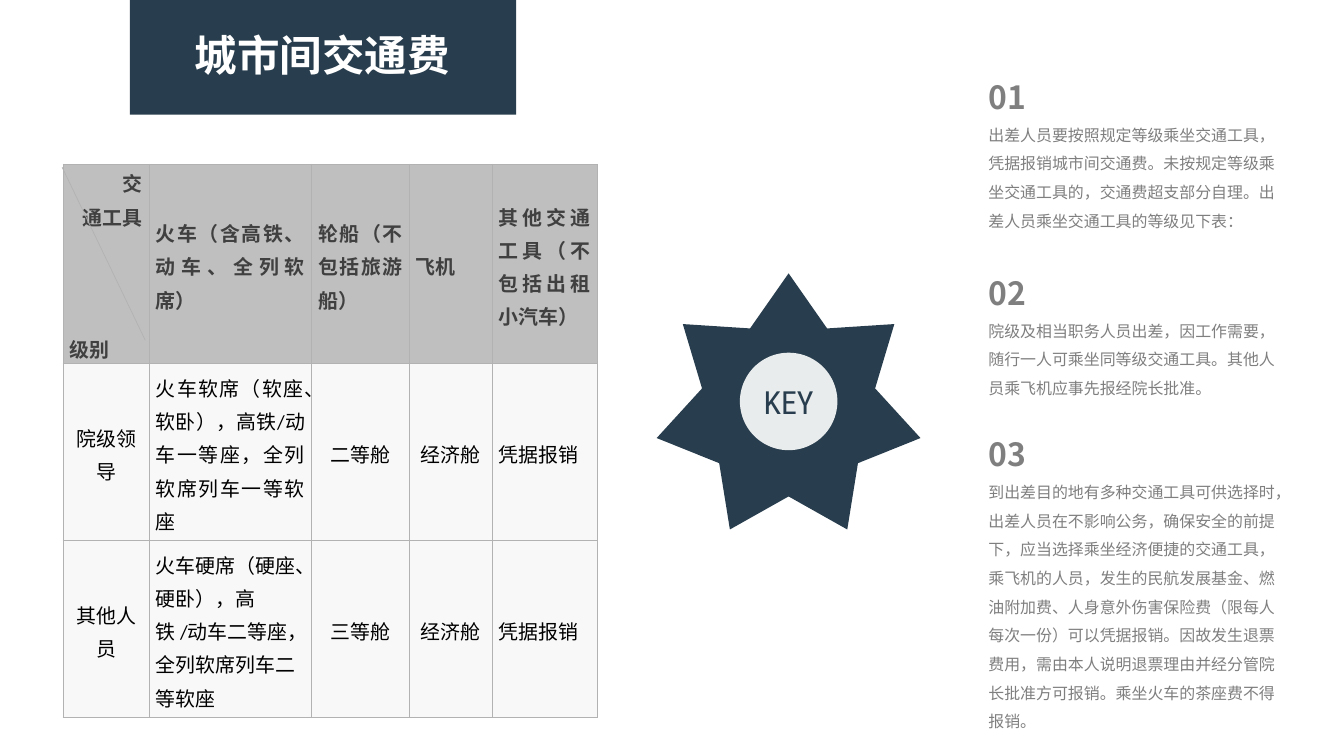
from lxml import etree
from pptx import Presentation
from pptx import util as u
from pptx.dml.color import RGBColor
from pptx.enum import shapes, text
from pptx.oxml.ns import qn

NAVY = RGBColor(0x28, 0x3E, 0x4E)
WHITE = RGBColor(0xFF, 0xFF, 0xFF)
BLACK = RGBColor(0x00, 0x00, 0x00)
TEXT_GRAY = RGBColor(0x7F, 0x7F, 0x7F)
HEADER_TEXT = RGBColor(0x40, 0x40, 0x40)
HEADER_FILL = RGBColor(0xBF, 0xBF, 0xBF)
BODY_FILL = RGBColor(0xF8, 0xF8, 0xF8)
BORDER = RGBColor(0xB2, 0xB2, 0xB2)
CJK_FONT = "Noto Sans CJK SC"
LEFT, CENTER = text.PP_ALIGN.LEFT, text.PP_ALIGN.CENTER
RIGHT, JUSTIFY = text.PP_ALIGN.RIGHT, text.PP_ALIGN.JUSTIFY

TITLE = "城市间交通费"
NOTES = [  # number, top, height, body
    ("01", 0.61, 1.82, "出差人员要按照规定等级乘坐交通工具，凭据报销城市间交通费。未按规定等级乘坐交通工具的，"
     "交通费超支部分自理。出差人员乘坐交通工具的等级见下表："),
    ("02", 2.66, 1.51, "院级及相当职务人员出差，因工作需要，随行一人可乘坐同等级交通工具。"
     "其他人员乘飞机应事先报经院长批准。"),
    ("03", 4.35, 3.33, "到出差目的地有多种交通工具可供选择时，出差人员在不影响公务，确保安全的前提下，"
     "应当选择乘坐经济便捷的交通工具，乘飞机的人员，发生的民航发展基金、燃油附加费、"
     "人身意外伤害保险费（限每人每次一份）可以凭据报销。因故发生退票费用，"
     "需由本人说明退票理由并经分管院长批准方可报销。乘坐火车的茶座费不得报销。"),
]
CORNER = ("交\v通工具", "级别")
TABLE_ROWS = [
    ("", "火车（含高铁、动车、全列软席）", "轮船（不包括旅游船）", "飞机", "其他交通工具（不包括出租小汽车）"),
    ("院级领导", "火车软席（软座、软卧），高铁/动车一等座，全列软席列车一等软座", "二等舱", "经济舱", "凭据报销"),
    ("其他人员", "火车硬席（硬座、硬卧），高铁 /动车二等座，全列软席列车二等软座", "三等舱", "经济舱", "凭据报销"),
]
BODY_ALIGNMENTS = [
    (CENTER, JUSTIFY, CENTER, CENTER, JUSTIFY),
    (CENTER, LEFT, CENTER, CENTER, LEFT),
]
COLUMN_WIDTHS = (0.9, 1.7, 1.02, 0.87, 1.1)
ROW_HEIGHT = 1.85


def box(left, top, width, height):
    return [u.Inches(value) for value in (left, top, width, height)]


def write(frame, words, size, color, font=CJK_FONT, bold=False, align=LEFT, spacing=None, before=None):
    """Fill the first paragraph of the frame, or add one when it is taken."""
    paragraph = frame.paragraphs[0]
    if paragraph.text:
        paragraph = frame.add_paragraph()
    paragraph.text = words
    paragraph.alignment = align
    paragraph.line_spacing = spacing
    paragraph.space_before = before
    for run in paragraph.runs:
        run.font.name, run.font.size, run.font.bold = font, u.Pt(size), bold
        run.font.color.rgb = color
        etree.SubElement(run.font._element, qn("a:ea"), typeface=CJK_FONT)


def set_margins(frame, side, vertical):
    frame.margin_left = frame.margin_right = u.Inches(side)
    frame.margin_top = frame.margin_bottom = u.Inches(vertical)


def add_filled(slide, preset, bounds, color):
    shape = slide.shapes.add_shape(preset, *box(*bounds))
    shape.shadow.inherit = False
    shape.fill.solid()
    shape.fill.fore_color.rgb = color
    shape.line.fill.background()
    return shape


def add_borders(cell):
    properties = cell._tc.get_or_add_tcPr()
    for index, side in enumerate(("lnL", "lnR", "lnT", "lnB")):
        line = etree.Element(qn("a:" + side), w=str(u.Pt(1)))
        fill = etree.SubElement(line, qn("a:solidFill"))
        etree.SubElement(fill, qn("a:srgbClr"), val=str(BORDER))
        properties.insert(index, line)


def add_fare_table(slide):
    bounds = box(0.66, 1.72, sum(COLUMN_WIDTHS), ROW_HEIGHT * len(TABLE_ROWS))
    table = slide.shapes.add_table(len(TABLE_ROWS), len(COLUMN_WIDTHS), *bounds).table
    table.first_row = table.horz_banding = False
    for column, width in zip(table.columns, COLUMN_WIDTHS):
        column.width = u.Inches(width)
    for row_index, row in enumerate(TABLE_ROWS):
        table.rows[row_index].height = u.Inches(ROW_HEIGHT)
        header = row_index == 0
        style = dict(size=15, font="Calibri", bold=header, spacing=u.Pt(25),
                     color=HEADER_TEXT if header else BLACK)
        for column_index, words in enumerate(row):
            cell = table.cell(row_index, column_index)
            cell.fill.solid()
            cell.fill.fore_color.rgb = HEADER_FILL if header else BODY_FILL
            cell.vertical_anchor = text.MSO_ANCHOR.MIDDLE
            set_margins(cell, 0.07, 0)
            add_borders(cell)
            if header and column_index == 0:
                write(cell.text_frame, CORNER[0], align=RIGHT, **style)
                write(cell.text_frame, CORNER[1], align=JUSTIFY, before=u.Pt(75), **style)
            else:
                align = JUSTIFY if header else BODY_ALIGNMENTS[row_index - 1][column_index]
                write(cell.text_frame, words, align=align, **style)


def add_corner_diagonal(slide):
    ends = box(0.65, 1.75, 1.52, 3.56)
    line = slide.shapes.add_connector(shapes.MSO_CONNECTOR.STRAIGHT, *ends)
    line.line.color.rgb = BORDER
    line.line.width = u.Pt(0.5)
    etree.SubElement(line._element.spPr, qn("a:effectLst"))


def add_key_star(slide):
    star = add_filled(slide, shapes.MSO_SHAPE.STAR_7_POINT, (6.87, 2.86, 2.76, 2.68), NAVY)
    star.adjustments[0] = 0.328
    disc = add_filled(slide, shapes.MSO_SHAPE.OVAL, (7.74, 3.69, 1.02, 1.02), WHITE)
    color = disc._element.spPr.find(qn("a:solidFill"))[0]
    etree.SubElement(color, qn("a:alpha"), val="90000")
    disc.text_frame.vertical_anchor = text.MSO_ANCHOR.MIDDLE
    write(disc.text_frame, "KEY", 24, NAVY, font="Roboto Condensed", align=CENTER)


def add_title(slide):
    add_filled(slide, shapes.MSO_SHAPE.RECTANGLE, (1.36, 0, 4.04, 1.2), NAVY)
    title = slide.shapes.title
    title.left, title.top, title.width, title.height = box(1.93, 0.25, 2.89, 0.64)
    title.text_frame.word_wrap = False
    title.text_frame.vertical_anchor = text.MSO_ANCHOR.MIDDLE
    write(title.text_frame, TITLE, 32, WHITE, bold=True, align=CENTER)
    title._element.getparent().append(title._element)  # bring in front of the banner


def add_notes_column(slide):
    for number, top, height, body in NOTES:
        frame = slide.shapes.add_textbox(*box(10.34, top, 3.07, height)).text_frame
        frame.word_wrap = True
        set_margins(frame, 0, 0)
        write(frame, number, 24, TEXT_GRAY, bold=True, spacing=1.5)
        write(frame, body, 12, TEXT_GRAY, spacing=1.5)


def main():
    presentation = Presentation()
    presentation.slide_width, presentation.slide_height = u.Inches(14.06), u.Inches(7.91)
    slide = presentation.slides.add_slide(presentation.slide_layouts[5])
    add_key_star(slide)
    add_title(slide)
    add_notes_column(slide)
    add_fare_table(slide)
    add_corner_diagonal(slide)
    presentation.save("out.pptx")


if __name__ == "__main__":
    main()
